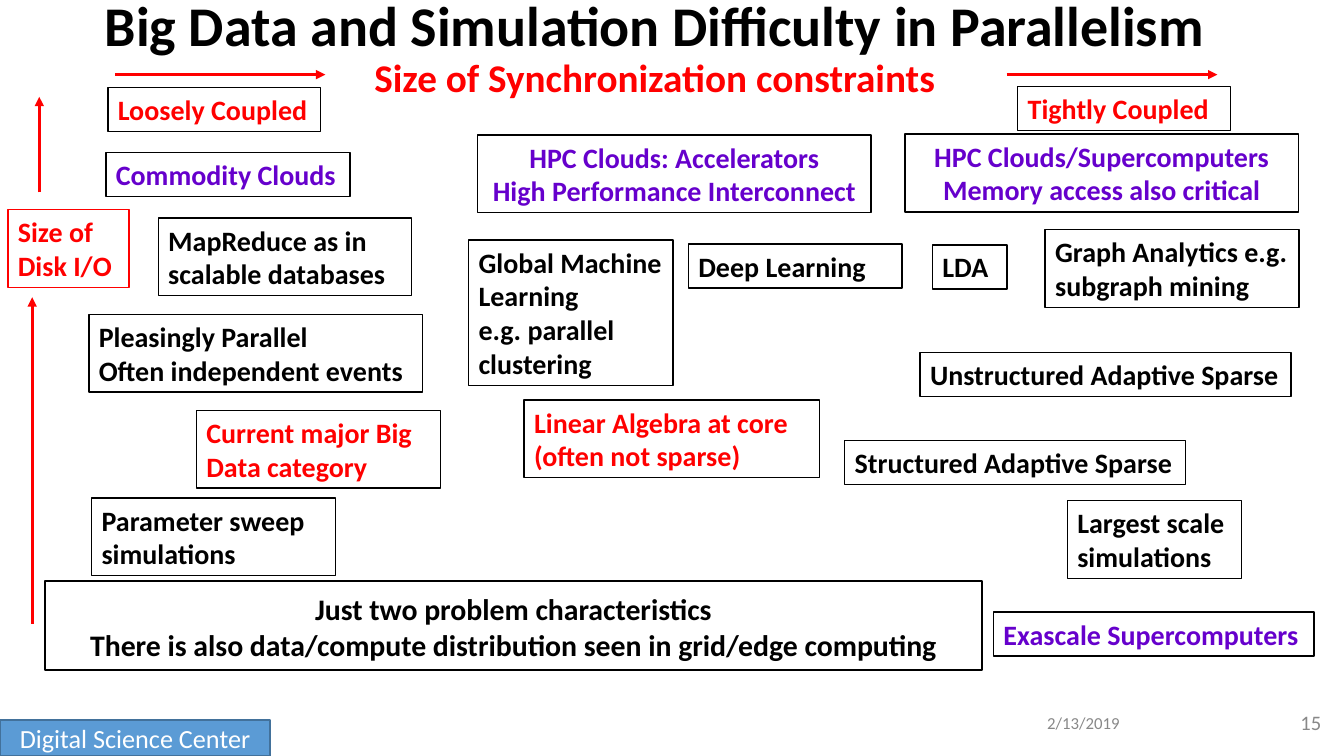
from pptx import Presentation
from pptx.dml.color import RGBColor
from pptx.enum.shapes import MSO_CONNECTOR, MSO_SHAPE
from pptx.enum.text import MSO_ANCHOR as ANCHOR, MSO_AUTO_SIZE, PP_ALIGN as ALIGN
from pptx.oxml.ns import qn
from pptx.util import Cm, Pt
from lxml.etree import SubElement

COLORS = {
    "black": "000000", "red": "FF0000", "purple": "6600CC", "white": "FFFFFF",
    "gray": "888888", "blue": "5B9BD5", "navy": "42719B",
}


def rgb(name):
    return RGBColor.from_string(COLORS[name])


def write(p, text, size=20, color="black", bold=True, font="Calibri"):
    """Add text to a paragraph; a vertical tab stands for a line break."""
    for i, part in enumerate(text.split("\v")):
        if i:
            p.add_line_break()
        if part:
            r = p.add_run()
            r.text = part
            r.font.name, r.font.size, r.font.bold = font, Pt(size), bold
            r.font.color.rgb = rgb(color)


class Board:
    def __init__(self, prs, layout):
        self.slide = prs.slides.add_slide(prs.slide_layouts[layout])
        self.shapes = self.slide.shapes

    def frame(self, sp, anchor=ANCHOR.TOP, pad_x=0.25, pad_y=0.13):
        tf = sp.text_frame
        tf.word_wrap, tf.auto_size = True, MSO_AUTO_SIZE.NONE
        tf.vertical_anchor = anchor
        tf.margin_left = tf.margin_right = Cm(pad_x)
        tf.margin_top = tf.margin_bottom = Cm(pad_y)
        return tf

    def fill_text(self, tf, text, align=ALIGN.LEFT, **fmt):
        for i, line in enumerate(text.split("\n")):
            p = tf.add_paragraph() if i else tf.paragraphs[0]
            p.alignment = align
            write(p, line, **fmt)

    def placeholder(self, idx, x, y, w, h, **frame):
        sp = self.slide.placeholders[idx]
        sp.left, sp.top, sp.width, sp.height = Cm(x), Cm(y), Cm(w), Cm(h)
        tf = self.frame(sp, **frame)
        p = tf.paragraphs[0]
        p.alignment = ALIGN.CENTER
        p.space_before = Pt(0)
        return sp, p

    def box(self, text, x, y, w, h, fill=None, line="black",
            anchor=ANCHOR.TOP, **fmt):
        sp = self.shapes.add_shape(MSO_SHAPE.RECTANGLE, Cm(x), Cm(y), Cm(w), Cm(h))
        sp.shadow.inherit = False
        if fill:
            sp.fill.solid()
            sp.fill.fore_color.rgb = rgb(fill)
        else:
            sp.fill.background()
        sp.line.color.rgb, sp.line.width = rgb(line), Pt(1)
        self.fill_text(self.frame(sp, anchor), text, **fmt)

    def label(self, text, x, y, w, h, pad_x=0.25, **fmt):
        sp = self.shapes.add_textbox(Cm(x), Cm(y), Cm(w), Cm(h))
        tf = self.frame(sp, ANCHOR.MIDDLE, pad_x)
        self.fill_text(tf, text, bold=False, color="gray", **fmt)

    def arrow(self, x1, y1, x2, y2):
        line = self.shapes.add_connector(
            MSO_CONNECTOR.STRAIGHT, Cm(x1), Cm(y1), Cm(x2), Cm(y2))
        line.line.color.rgb, line.line.width = rgb("red"), Pt(2.25)
        SubElement(line.line._get_or_add_ln(), qn("a:tailEnd"), type="triangle")
        SubElement(line._element.spPr, qn("a:effectLst"))


# Boxes: text, left, top, width, number of lines, text colour
TOPICS = [
    ("Pleasingly Parallel\nOften independent events", 2.24, 7.92, 8.41, 2, "black"),
    ("MapReduce as in scalable databases", 3.99, 5.49, 6.38, 2, "black"),
    ("Structured Adaptive Sparse", 21.29, 11.1, 8.59, 1, "black"),
    ("Loosely Coupled", 2.72, 2.21, 5.36, 1, "red"),
    ("Largest scale simulations", 26.9, 12.62, 4.39, 2, "black"),
    ("Current major Big Data category", 4.95, 10.34, 6.15, 2, "red"),
    ("Commodity Clouds", 2.67, 3.84, 6.15, 1, "purple"),
    ("Exascale Supercomputers", 25.04, 15.42, 8.08, 1, "purple"),
    ("Global Machine Learning\ne.g. parallel clustering", 11.81, 6.05, 5.15, 4, "black"),
    ("Deep Learning", 17.35, 6.15, 5.38, 1, "black"),
    ("Unstructured Adaptive Sparse", 23.19, 8.89, 9.35, 1, "black"),
    ("Graph Analytics e.g. subgraph mining", 26.34, 5.79, 6.4, 2, "black"),
    ("LDA", 23.5, 6.17, 1.88, 1, "black"),
    ("Linear Algebra at core (often not sparse)", 13.21, 10.08, 7.44, 2, "red"),
    ("Tightly Coupled", 25.65, 2.18, 5.36, 1, "red"),
    ("Parameter sweep simulations", 2.31, 12.55, 6.15, 2, "black"),
]
PLATFORMS = [
    ("HPC Clouds: Accelerators\nHigh Performance Interconnect", 12.04, 3.4),
    ("HPC Clouds/Supercomputers\nMemory access also critical", 22.81, 3.38),
]
ARROWS = [
    (2.9, 1.88, 8.2, 1.88), (25.37, 1.88, 30.68, 1.88),
    (0.81, 15.72, 0.81, 7.49), (0.99, 4.85, 0.99, 2.44),
]


def box_height(lines):
    return round(0.26 + 0.85 * lines, 2)


def main():
    prs = Presentation()
    prs.slide_width, prs.slide_height = Cm(33.87), Cm(19.05)
    board = Board(prs, 1)

    # Title
    _, p = board.placeholder(0, 0.81, 0.23, 31.37, 2.06, anchor=ANCHOR.MIDDLE)
    p.line_spacing = 0.9
    write(p, "Big Data and Simulation Difficulty in Parallelism\v", size=40)
    write(p, "Size of Synchronization constraints", size=28, color="red")

    # Summary without bullets
    sp, p = board.placeholder(1, 1.14, 14.63, 23.6, 2.26, pad_y=0.25)
    sp.line.color.rgb, sp.line.width = rgb("black"), Pt(1.5)
    ppr = p._p.get_or_add_pPr()
    ppr.set("marL", "0")
    ppr.set("indent", "0")
    SubElement(ppr, qn("a:buNone"))
    write(p, "Just two problem characteristics\v"
             "There is also data/compute distribution seen in grid/edge computing",
          size=21.3)

    # Axes
    for ends in ARROWS:
        board.arrow(*ends)
    board.box("Size of Disk I/O", 0.2, 5.28, 3.05, box_height(2),
              line="red", color="red")

    # Problem classes and platforms
    for text, x, y, w, lines, color in TOPICS:
        board.box(text, x, y, w, box_height(lines), color=color)
    for text, x, y in PLATFORMS:
        board.box(text, x, y, 9.91, box_height(2), color="purple", align=ALIGN.CENTER)

    # Footer
    board.box("Digital Science Center", 0, 18.14, 6.81, 0.91, fill="blue",
              line="navy", anchor=ANCHOR.MIDDLE, align=ALIGN.CENTER,
              size=18.7, color="white", bold=False)
    board.label("2/13/2019", 26.21, 17.7, 3.58, 1.02, pad_x=0.18, size=12)
    board.label("15", 30.53, 17.7, 3.02, 1.02, size=14.7, align=ALIGN.RIGHT)

    prs.save("out.pptx")


if __name__ == "__main__":
    main()
